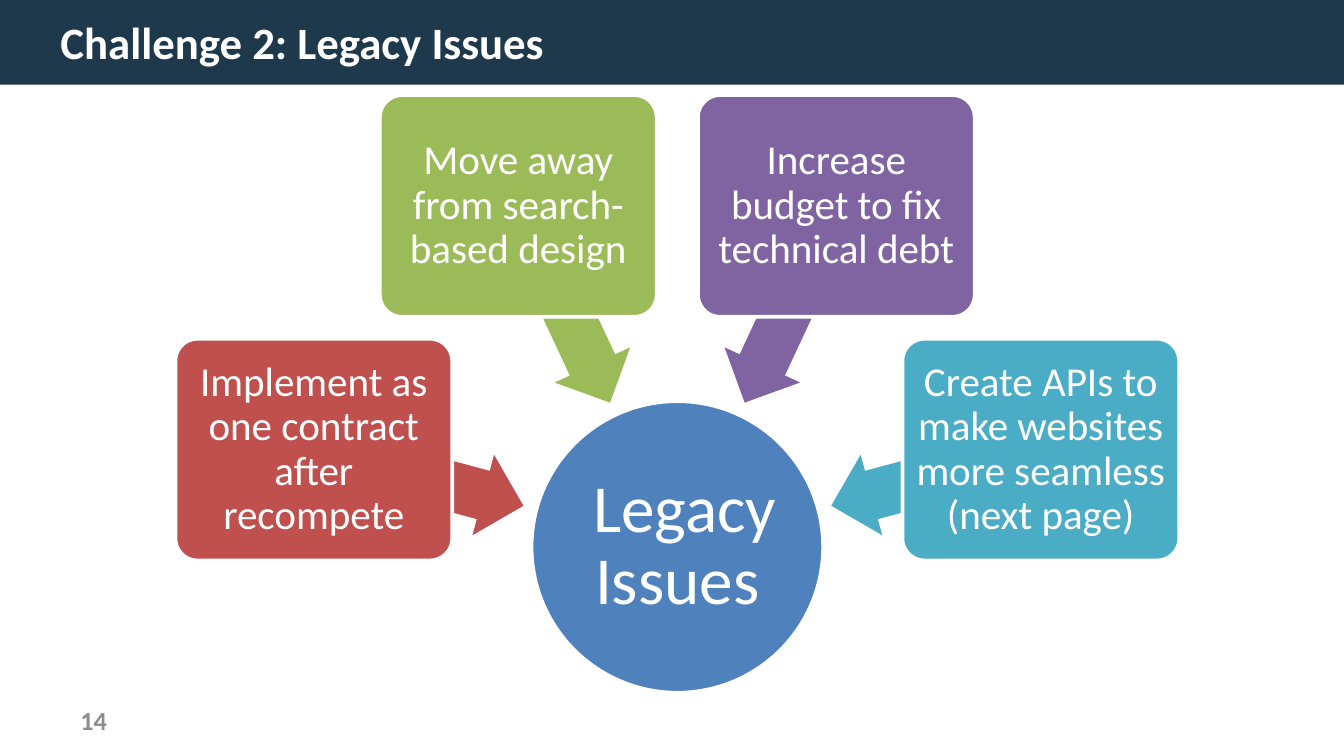
from math import cos, radians, sin

from pptx import Presentation
from pptx.dml.color import RGBColor
from pptx.enum.shapes import MSO_SHAPE as Shape
from pptx.enum.text import MSO_ANCHOR as Anchor, MSO_AUTO_SIZE as AutoSize, PP_ALIGN as Align
from pptx.util import Inches, Pt

COLORS = {
    "navy": "1E384C", "white": "FFFFFF", "gray": "8C8C8C", "blue": "4F81BD",
    "red": "C0504D", "green": "9BBB59", "purple": "8064A2", "teal": "4BACC6",
}
TITLE = "Challenge 2: Legacy Issues"
PAGE_NUMBER = "14"
HUB = " Legacy Issues"
ACTIONS = [
    ("Implement as one contract after recompete", "red", 195),
    ("Move away from search-based design", "green", 245),
    ("Increase budget to fix technical debt", "purple", 295),
    ("Create APIs to make websites more seamless (next page)", "teal", 345),
]

PAGE_WIDTH = Inches(10)
PAGE_HEIGHT = PAGE_WIDTH * 9 // 16
CENTER_X, CENTER_Y = 5.04, 4.07
HUB_SIZE = (2.17, 2.17)
BOX_SIZE, BOX_RADIUS = (2.06, 1.65), 2.8
ARROW_SIZE, ARROW_RADIUS = (1.61, 0.62), 1.99


def color(name):
    return RGBColor.from_string(COLORS[name])


def write(shape, text, size, name="white", align=Align.CENTER, bold=False, inset=None):
    frame = shape.text_frame
    settings = {"word_wrap": True, "auto_size": AutoSize.NONE, "vertical_anchor": Anchor.MIDDLE}
    if inset is not None:
        for side in ("left", "right", "top", "bottom"):
            settings[f"margin_{side}"] = Inches(inset)
    for key, value in settings.items():
        setattr(frame, key, value)
    para = frame.paragraphs[0]
    para.alignment = align
    span = para.add_run()
    span.text = text
    for key, value in {"name": "Calibri", "size": Pt(size), "bold": bold}.items():
        setattr(span.font, key, value)
    span.font.color.rgb = color(name)
    return para


def add_filled(page, kind, left, top, size, name, outlined=False):
    shape = page.shapes.add_shape(kind, *map(Inches, (left, top, *size)))
    shape.shadow.inherit = False
    shape.fill.solid()
    shape.fill.fore_color.rgb = color(name)
    if outlined:
        shape.line.color.rgb = color("white")
        shape.line.width = Pt(2)
    else:
        shape.line.fill.background()
    return shape


def add_around_hub(page, kind, size, radius, angle, name, outlined=False):
    left = CENTER_X + radius * cos(radians(angle)) - size[0] / 2
    top = CENTER_Y + radius * sin(radians(angle)) - size[1] / 2
    return add_filled(page, kind, left, top, size, name, outlined)


def main():
    deck = Presentation()
    deck.slide_width, deck.slide_height = PAGE_WIDTH, PAGE_HEIGHT
    page = deck.slides.add_slide(deck.slide_layouts[5])

    banner = add_filled(page, Shape.RECTANGLE, 0, 0, (10, 0.63), "navy")
    page.shapes._spTree.insert(2, banner._element)

    title = page.shapes.title
    title.left, title.top, title.width, title.height = map(Inches, (0.35, 0.05, 9.15, 0.52))
    write(title, TITLE, 24, align=Align.LEFT, bold=True)

    number = page.shapes.add_textbox(*map(Inches, (0.5, 5.21, 2.25, 0.3)))
    write(number, PAGE_NUMBER, 14, "gray", Align.LEFT, True)

    hub = add_around_hub(page, Shape.OVAL, HUB_SIZE, 0, 0, "blue", True)
    write(hub, HUB, 36, inset=0.02).line_spacing = 0.9

    for text, name, angle in ACTIONS:
        arrow = add_around_hub(page, Shape.LEFT_ARROW, ARROW_SIZE, ARROW_RADIUS, angle, name)
        arrow.rotation = angle
        arrow.adjustments[0], arrow.adjustments[1] = 0.6, 0.5
        box = add_around_hub(page, Shape.ROUNDED_RECTANGLE, BOX_SIZE, BOX_RADIUS, angle, name, True)
        box.adjustments[0] = 0.1
        write(box, text, 22, inset=0.05).line_spacing = 0.9

    deck.save("out.pptx")


if __name__ == "__main__":
    main()
